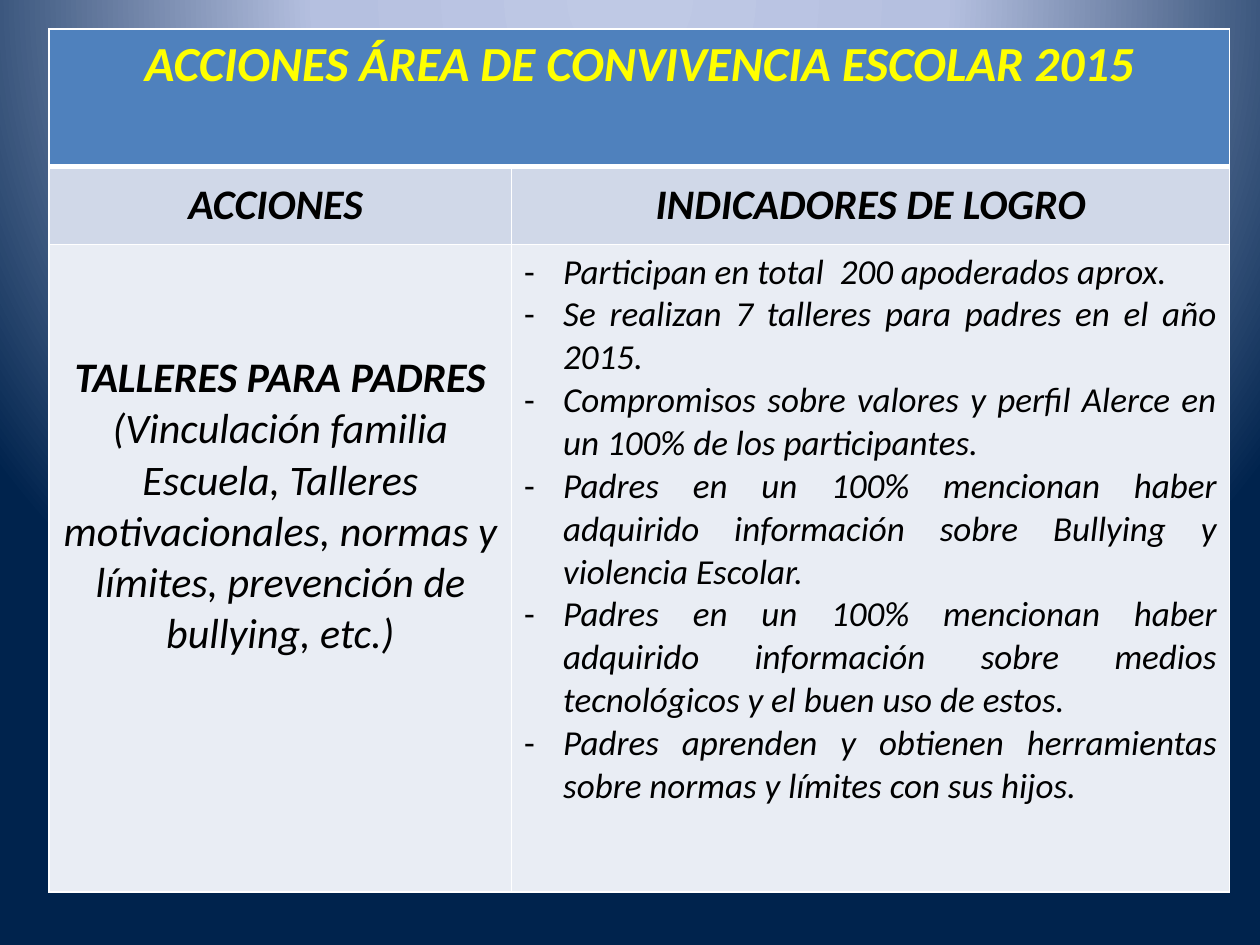
"""Build the slide of school coexistence actions as one table over a radial gradient."""
from dataclasses import dataclass

from lxml import etree
from pptx import Presentation, util as u
from pptx.dml.color import RGBColor
from pptx.enum import text
from pptx.oxml import parse_xml
from pptx.oxml.ns import nsdecls, qn

WIDTH, HEIGHT = 10, 7.5
LEFT, TOP = 0.39, 0.23
COLUMNS = (3.67, 5.70)
ROWS = (1.09, 0.62, 5.14)
INDENT = 0.31
THIN, THICK = 1, 3
COLORS = {
    "header": "4F81BD", "subheader": "D0D8E8", "body": "E9EDF4",
    "title": "FFFF00", "text": "000000", "border": "FFFFFF",
}
GRADIENT = ((0, "BFC9E5"), (40, "B5C0E0"), (100, "00234D"))
CENTER, JUSTIFY = text.PP_ALIGN.CENTER, text.PP_ALIGN.JUSTIFY


@dataclass
class Line:
    content: str
    bold: bool = True


@dataclass
class TableCell:
    row: int
    column: int
    lines: list[Line]
    fill: str
    size: int = 24
    color: str = "text"
    align: text.PP_ALIGN = CENTER
    anchor: text.MSO_ANCHOR = text.MSO_ANCHOR.TOP
    margin_top: float = 0.05
    bullet: str = ""


INDICATORS = (
    "Participan en total  200 apoderados aprox.",
    "Se realizan 7 talleres para padres en el año 2015.",
    "Compromisos sobre valores y perfil Alerce en un 100% de los participantes.",
    "Padres en un 100% mencionan haber adquirido información sobre Bullying y violencia Escolar.",
    "Padres en un 100% mencionan haber adquirido información sobre medios tecnológicos "
    "y el buen uso de estos.",
    "Padres aprenden y obtienen herramientas sobre normas y límites con sus hijos.",
)
WORKSHOPS = [
    Line("TALLERES PARA PADRES"),
    Line("(Vinculación familia Escuela, Talleres motivacionales, normas y límites, "
         "prevención de bullying, etc.)", bold=False),
]
CELLS = (
    TableCell(0, 0, [Line("ACCIONES ÁREA DE CONVIVENCIA ESCOLAR 2015")], "header",
              size=28, color="title"),
    TableCell(1, 0, [Line("ACCIONES ")], "subheader", anchor=text.MSO_ANCHOR.MIDDLE),
    TableCell(1, 1, [Line("INDICADORES DE LOGRO")], "subheader",
              anchor=text.MSO_ANCHOR.MIDDLE),
    TableCell(2, 0, WORKSHOPS, "body", margin_top=0.86),
    TableCell(2, 1, [Line(item, bold=False) for item in INDICATORS], "body",
              size=20, align=JUSTIFY, bullet="-"),
)


def set_background(slide) -> None:
    stops = "".join(
        f'<a:gs pos="{position * 1000}"><a:srgbClr val="{color}"/></a:gs>'
        for position, color in GRADIENT)
    slide.element.cSld.insert(0, parse_xml(
        f'<p:bg {nsdecls("p", "a")}><p:bgPr><a:gradFill rotWithShape="1">'
        f'<a:gsLst>{stops}</a:gsLst><a:path path="circle">'
        '<a:fillToRect l="50000" t="-80000" r="50000" b="180000"/></a:path>'
        '</a:gradFill><a:effectLst/></p:bgPr></p:bg>'))


def add_text(paragraph, content: str, *, size: int, color: str, bold: bool,
             align: text.PP_ALIGN, bullet: str = "") -> None:
    paragraph.alignment = align
    run = paragraph.add_run()
    run.text = content
    font = run.font
    font.name, font.size, font.bold, font.italic = "Calibri", u.Pt(size), bold, True
    font.color.rgb = RGBColor.from_string(COLORS[color])
    if bullet:
        properties = paragraph._p.get_or_add_pPr()
        properties.set("marL", str(u.Inches(INDENT)))
        properties.set("indent", str(-u.Inches(INDENT)))
        etree.SubElement(properties, qn("a:buFont")).set("typeface", "Calibri")
        etree.SubElement(properties, qn("a:buChar")).set("char", bullet)


def set_borders(cell, row: int) -> None:
    widths = {"lnL": THIN, "lnR": THIN,
              "lnT": THICK if row == 1 else THIN, "lnB": THICK if row == 0 else THIN}
    properties = cell._tc.get_or_add_tcPr()
    for index, (side, width) in enumerate(widths.items()):
        properties.insert(index, parse_xml(
            f'<a:{side} {nsdecls("a")} w="{u.Pt(width)}"><a:solidFill>'
            f'<a:srgbClr val="{COLORS["border"]}"/></a:solidFill></a:{side}>'))


def fill_cell(table, item: TableCell) -> None:
    cell = table.cell(item.row, item.column)
    cell.fill.solid()
    cell.fill.fore_color.rgb = RGBColor.from_string(COLORS[item.fill])
    cell.vertical_anchor = item.anchor
    cell.margin_top = u.Inches(item.margin_top)
    frame = cell.text_frame
    for index, line in enumerate(item.lines):
        paragraph = frame.add_paragraph() if index else frame.paragraphs[0]
        add_text(paragraph, line.content, size=item.size, color=item.color,
                 bold=line.bold, align=item.align, bullet=item.bullet)


def add_actions_table(slide) -> None:
    lengths = (LEFT, TOP, sum(COLUMNS), sum(ROWS))
    table = slide.shapes.add_table(len(ROWS), len(COLUMNS), *map(u.Inches, lengths)).table
    table.first_row = table.horz_banding = False
    for column, width in zip(table.columns, COLUMNS):
        column.width = u.Inches(width)
    for row, height in zip(table.rows, ROWS):
        row.height = u.Inches(height)
    table.cell(0, 0).merge(table.cell(0, 1))
    for item in CELLS:
        fill_cell(table, item)
    for index, row in enumerate(table.rows):
        for cell in row.cells:
            set_borders(cell, index)


def main() -> None:
    presentation = Presentation()
    presentation.slide_width, presentation.slide_height = u.Inches(WIDTH), u.Inches(HEIGHT)
    slide = presentation.slides.add_slide(presentation.slide_layouts.get_by_name("Blank"))
    set_background(slide)
    add_actions_table(slide)
    presentation.save("out.pptx")


if __name__ == "__main__":
    main()
